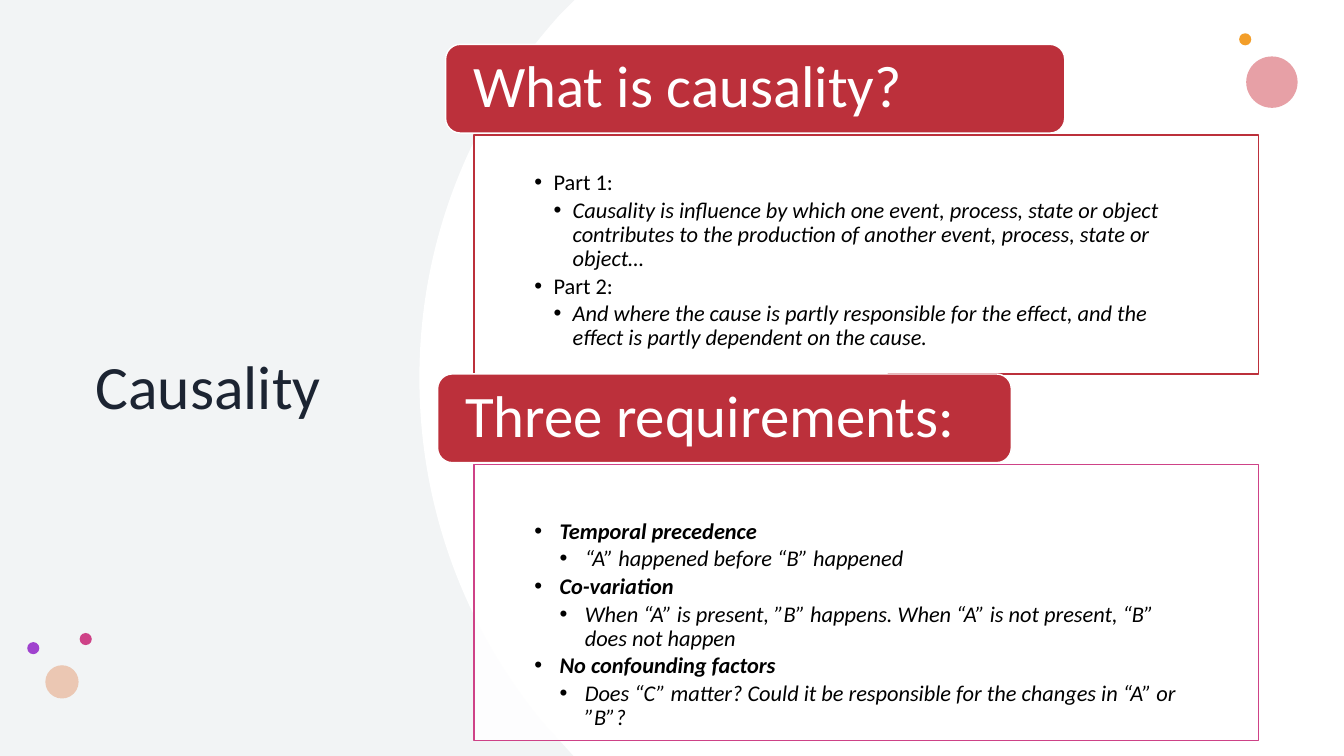
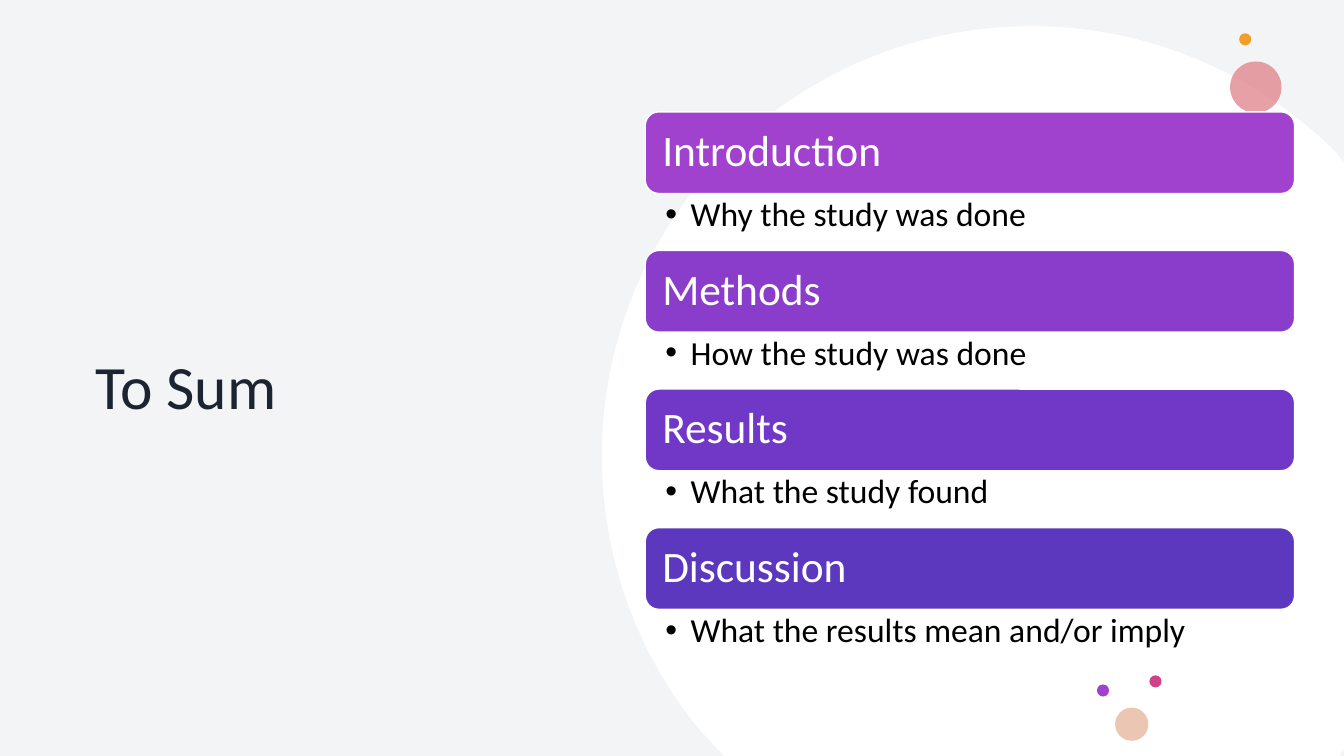
from lxml import etree
from pptx import Presentation
from pptx import util as u
from pptx.dml import color
from pptx.enum import shapes, text
from pptx.oxml import ns

WIDTH, HEIGHT = 13.33, 7.5
FONT = "Calibri"
BACKDROP, WHITE, BLACK, TITLE_INK = "D5DBDE", "FFFFFF", "000000", "1C2432"
RED, PINK, PURPLE, ROSE, ORANGE, PEACH = "BC303B", "CE4287", "A042CE", "DE7C84", "F39E29", "EBC7B3"
RECT, ROUNDED, OVAL = (shapes.MSO_SHAPE.RECTANGLE, shapes.MSO_SHAPE.ROUNDED_RECTANGLE,
                       shapes.MSO_SHAPE.OVAL)
TOP, MIDDLE = text.MSO_ANCHOR.TOP, text.MSO_ANCHOR.MIDDLE

SIDE_DISC = [
    [(5.7, 0)], [(WIDTH, 0)], [(WIDTH, HEIGHT)], [(5.69, HEIGHT)], [(5.39, 7.17)],
    [(4.62, 6.24), (4.16, 5.05), (4.16, 3.75)],
    [(4.16, 2.36), (4.69, 1.1), (5.56, 0.14)],
]
LOW_DISC = [
    [(10.23, 0.26)], [(11.41, 0.26), (12.47, 0.74), (13.25, 1.51)],
    [(WIDTH, 1.61)], [(WIDTH, 7.44)], [(13.28, HEIGHT)], [(7.18, HEIGHT)], [(6.94, 7.24)],
    [(6.33, 6.5), (5.97, 5.55), (5.97, 4.52)],
    [(5.97, 2.17), (7.88, 0.26), (10.23, 0.26)],
]
DEFINITION = [
    (0, "Part 1:", False, False),
    (1, "Causality is influence by which one event, process, state or object contributes to "
        "the production of another event, process, state or object…", False, True),
    (0, "Part 2:", False, False),
    (1, "And where the cause is partly responsible for the effect, and the effect is partly "
        "dependent on the cause.", False, True),
]
REQUIREMENTS = [
    (0, "Temporal precedence", True, True),
    (1, "“A” happened before “B” happened", False, True),
    (0, "Co-variation", True, True),
    (1, "When “A” is present, ”B” happens. When “A” is not present, “B” does not happen", False, True),
    (0, "No confounding factors", True, True),
    (1, "Does “C” matter? Could it be responsible for the changes in “A” or ”B”?", False, True),
]
SECTIONS = [
    ("Introduction", "Why the study was done", PURPLE),
    ("Methods", "How the study was done", "893DCA"),
    ("Results", "What the study found", "7138C7"),
    ("Discussion", "What the results mean and/or imply", "5B38BE"),
]


def paint(target, hex_color, opacity=100):
    """Give a fill a solid colour and an opacity in percent."""
    target.solid()
    target.fore_color.rgb = color.RGBColor.from_string(hex_color)
    if opacity < 100:
        solid = target.fore_color._xFill
        etree.SubElement(solid[0], ns.qn("a:alpha"), val=str(opacity * 1000))


def add_block(slide, kind, box, fill, line=None, opacity=100):
    """Add a flat preset shape in a box of inches."""
    block = slide.shapes.add_shape(kind, *map(u.Inches, box))
    block.shadow.inherit = False
    paint(block.fill, fill, opacity)
    if line:
        paint(block.line.fill, line)
        block.line.width = u.Pt(1)
    else:
        block.line.fill.background()
    return block


def set_frame(holder, insets, anchor):
    """Set wrapping, insets in inches and anchor, and return the text frame."""
    frame = holder.text_frame
    frame.word_wrap = True
    frame.vertical_anchor = anchor
    frame.margin_left, frame.margin_top, frame.margin_right, frame.margin_bottom = map(u.Inches, insets)
    return frame


def write(paragraph, words, size, ink, bold=False, italic=False):
    """Write one left-aligned run in the shared font."""
    paragraph.alignment = text.PP_ALIGN.LEFT
    paragraph.line_spacing = 0.9
    run = paragraph.add_run()
    run.text = words
    run.font.name, run.font.size = FONT, u.Pt(size)
    run.font.bold, run.font.italic = bold, italic
    paint(run.font.fill, ink)


def write_bullets(frame, items, size, indent, gap):
    """Write nested bullets with a gap in percent and one indent per level."""
    for index, (level, words, bold, italic) in enumerate(items):
        paragraph = frame.add_paragraph() if index else frame.paragraphs[0]
        paragraph.level = level
        write(paragraph, words, size, BLACK, bold, italic)
        properties = paragraph._p.get_or_add_pPr()
        properties.set("marL", str(u.Inches(indent * (level + 1))))
        properties.set("indent", str(-u.Inches(indent)))
        after = etree.SubElement(properties, ns.qn("a:spcAft"))
        etree.SubElement(after, ns.qn("a:spcPct"), val=str(gap * 1000))
        etree.SubElement(properties, ns.qn("a:buFont"), typeface="Arial")
        etree.SubElement(properties, ns.qn("a:buChar"), char="•")


def add_band(slide, box, words, size, fill, inset):
    """Add a rounded heading band."""
    band = add_block(slide, ROUNDED, box, fill, WHITE)
    frame = set_frame(band, (inset, 0, inset, 0), MIDDLE)
    write(frame.paragraphs[0], words, size, WHITE)


def add_panel(slide, box, items, outline, insets, indent):
    """Add an outlined panel of bullets."""
    panel = add_block(slide, RECT, box, WHITE, outline, 90)
    write_bullets(set_frame(panel, insets, TOP), items, 16, indent, 15)


def add_disc(slide, segments):
    """Draw a white disc cut off at the slide edges, with three-point segments as curves."""
    points = [tuple(map(u.Inches, point)) for segment in segments for point in segment]
    builder = slide.shapes.build_freeform(*points[0])
    builder.add_line_segments(points[1:], close=True)
    disc = builder.convert_to_shape()
    disc.shadow.inherit = False
    paint(disc.fill, WHITE)
    disc.line.fill.background()
    steps = iter(list(disc._element.iter(ns.qn("a:lnTo"))))
    for segment in segments[1:]:
        parts = [next(steps) for _ in segment]
        if len(parts) == 3:
            curve = etree.Element(ns.qn("a:cubicBezTo"))
            parts[0].addprevious(curve)
            for part in parts:
                curve.append(part[0])
                part.getparent().remove(part)


def add_dots(slide, rose_at, trio_at):
    """Scatter the upper pair and the lower trio of dots."""
    left, top = trio_at
    dots = [
        (*rose_at, 0.51, ROSE, 72),
        (12.29, 0.33, 0.12, ORANGE, 100),
        (left + 0.52, top, 0.12, PINK, 100),
        (left + 0.18, top + 0.32, 0.33, PEACH, 100),
        (left, top + 0.09, 0.12, PURPLE, 100),
    ]
    for x, y, size, fill, opacity in dots:
        add_block(slide, OVAL, (x, y, size, size), fill, opacity=opacity)


def start_slide(deck, title, title_width, disc, rose_at, trio_at):
    """Add a slide with backdrop, disc, dots and side title."""
    slide = deck.slides.add_slide(deck.slide_layouts[6])
    paint(slide.background.fill, WHITE)
    add_block(slide, RECT, (0, 0, WIDTH, HEIGHT), BACKDROP, opacity=30)
    add_disc(slide, disc)
    add_dots(slide, rose_at, trio_at)
    heading = slide.shapes.add_textbox(*map(u.Inches, (0.85, 1.04, title_width, 5.64)))
    frame = set_frame(heading, (0.1, 0.05, 0.1, 0.05), MIDDLE)
    write(frame.paragraphs[0], title, 44, TITLE_INK)
    return slide


def add_sections(slide, box):
    """Stack equal sections, each a band with a bullet below it."""
    left, top, width, height = box
    pitch, band_height = height / len(SECTIONS), 0.81
    for index, (name, purpose, fill) in enumerate(SECTIONS):
        y = top + index * pitch
        add_band(slide, (left, y, width, band_height), name, 31, fill, 0.13)
        note = slide.shapes.add_textbox(
            *map(u.Inches, (left, y + band_height, width, pitch - band_height)))
        frame = set_frame(note, (0.2, 0.04, 0.24, 0.04), TOP)
        write_bullets(frame, [(0, purpose, False, False)], 24, 0.25, 20)


def causality_slide(deck):
    """Build the slide that defines causality."""
    slide = start_slide(deck, "Causality", 3.13, SIDE_DISC, (12.36, 0.56), (0.27, 6.28))
    add_panel(slide, (4.7, 1.34, 7.78, 2.37), DEFINITION, RED, (0.6, 0.36, 0.6, 0.12), 0.19)
    add_panel(slide, (4.7, 4.61, 7.78, 2.74), REQUIREMENTS, PINK, (0.6, 0.55, 0.6, 0.19), 0.25)
    add_band(slide, (4.42, 0.44, 6.14, 0.88), "What is causality?", 42, RED, 0.23)
    add_band(slide, (4.34, 3.71, 5.69, 0.88), "Three requirements:", 42, RED, 0.23)


def summary_slide(deck):
    """Build the slide that sums up the parts of a paper."""
    slide = start_slide(deck, "To Sum", 5.04, LOW_DISC, (12.2, 0.61), (10.88, 6.7))
    add_sections(slide, (6.4, 1.11, 6.44, 5.5))


def main():
    """Build and save the deck."""
    deck = Presentation()
    deck.slide_width, deck.slide_height = u.Inches(WIDTH), u.Inches(HEIGHT)
    causality_slide(deck)
    summary_slide(deck)
    deck.save("out.pptx")


if __name__ == "__main__":
    main()
